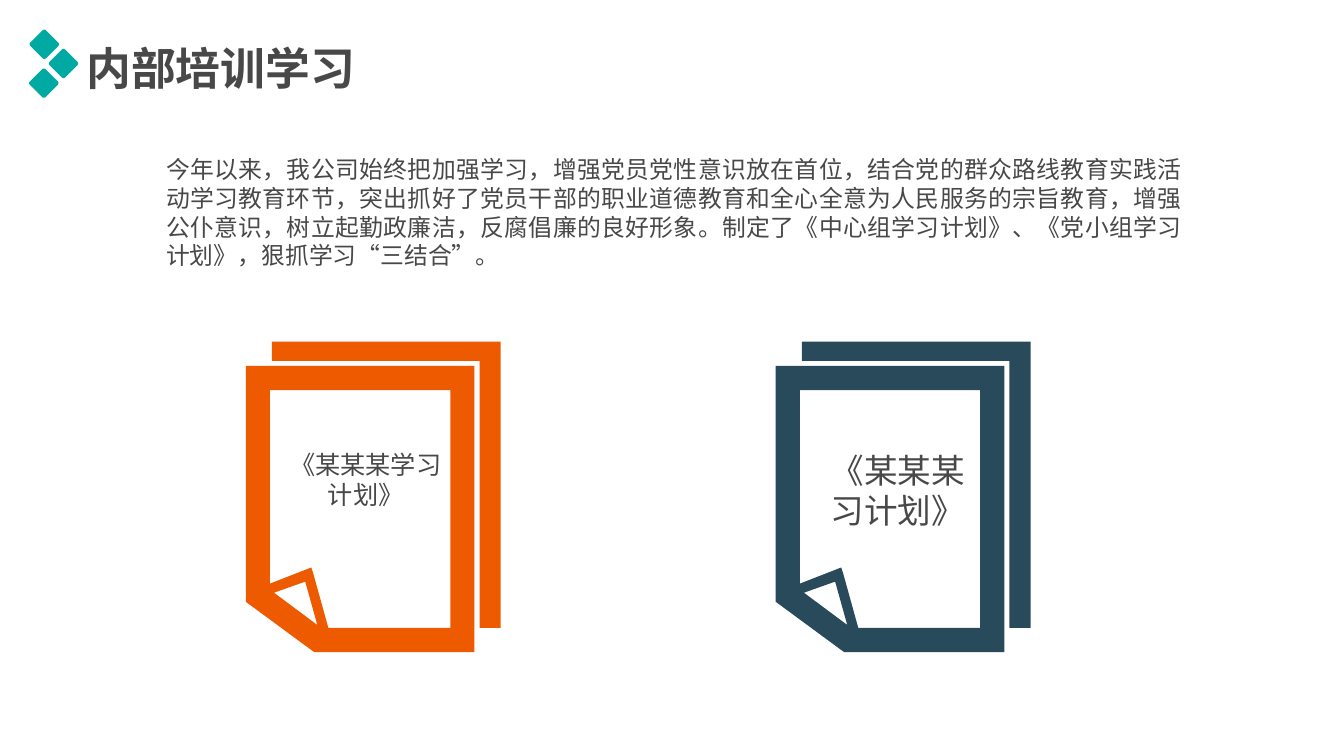
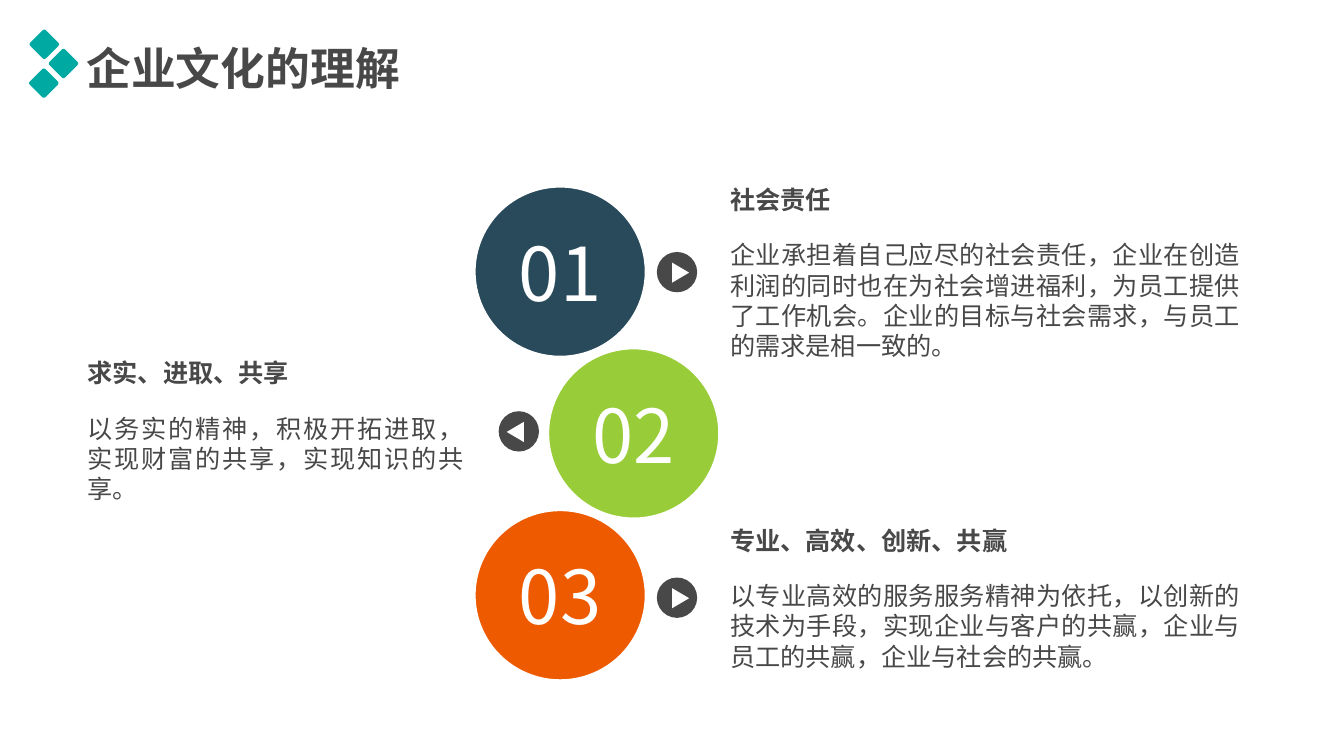
"""Build two slides on staff training and company culture."""
from dataclasses import dataclass

from lxml.etree import SubElement
from pptx import Presentation
from pptx.dml.color import RGBColor
from pptx.enum.lang import MSO_LANGUAGE_ID
from pptx.enum.shapes import MSO_SHAPE
from pptx.enum.text import MSO_ANCHOR, MSO_AUTO_SIZE, PP_ALIGN
from pptx.oxml.ns import qn
from pptx.presentation import Presentation as Deck
from pptx.shapes.autoshape import Shape
from pptx.slide import Slide
from pptx.text.text import TextFrame
from pptx.util import Inches, Pt


@dataclass(frozen=True)
class Theme:
    font: str = "Noto Sans CJK SC"
    ink: str = "484849"
    white: str = "FFFFFF"
    teal: str = "00AAA2"
    orange: str = "ED5A00"
    navy: str = "294A5A"
    green: str = "99CC39"
    title_size: int = 32
    intro_size: int = 17
    body_size: int = 18
    large_size: int = 24
    number_size: int = 53


@dataclass(frozen=True)
class Area:
    left: float
    top: float
    width: float
    height: float


@dataclass(frozen=True)
class Document:
    left: float
    color: str
    label: str
    label_area: Area
    label_size: int


@dataclass(frozen=True)
class Value:
    number: str
    color: str
    points_right: bool
    marker_top: float
    body_area: Area
    heading: str
    body: str


THEME = Theme()
DIAMOND_CENTERS = ((0.44, 0.44), (0.63, 0.63), (0.435, 0.825))
DIAMOND_SIDE = 0.22
DOCUMENT_TOP = 3.39
DOCUMENT_OUTLINES = (
    ((0.26, 0), (2.53, 0), (2.53, 2.84), (2.32, 2.84), (2.32, 0.19), (0.26, 0.19)),
    ((0, 0.24), (2.27, 0.24), (2.27, 3.08), (0.68, 3.08), (0, 2.58)),
    ((0.24, 2.4), (0.65, 2.24), (0.67, 2.3), (0.82, 2.84), (2.03, 2.84),
     (2.03, 0.48), (0.24, 0.48)),
    ((0.71, 2.81), (0.59, 2.38), (0.28, 2.49)),
)
DOCUMENTS = (
    Document(2.44, THEME.orange, "《某某某学习计划》",
             Area(2.72, 4.41, 1.82, 0.7), THEME.body_size),
    Document(7.7, THEME.navy, "《某某某习计划》",
             Area(8, 4.41, 1.82, 0.9), THEME.large_size),
)
INTRO = (
    "今年以来，我公司始终把加强学习，增强党员党性意识放在首位，"
    "结合党的群众路线教育实践活动学习教育环节，"
    "突出抓好了党员干部的职业道德教育和全心全意为人民服务的宗旨教育，"
    "增强公仆意识，树立起勤政廉洁，反腐倡廉的良好形象。"
    "制定了《中心组学习计划》、《党小组学习计划》，狠抓学习“三结合”。"
)
VALUES = (
    Value("01", THEME.navy, True, 2.5, Area(7.15, 2.33, 5.26, 1.3), "社会责任",
          "企业承担着自己应尽的社会责任，企业在创造利润的同时也在为社会增进福利，"
          "为员工提供了工作机会。企业的目标与社会需求，与员工的需求是相一致的。"),
    Value("02", THEME.green, False, 4.08, Area(0.77, 4.05, 3.93, 1), "求实、进取、共享",
          "以务实的精神，积极开拓进取，实现财富的共享，实现知识的共享。"),
    Value("03", THEME.orange, True, 5.73, Area(7.15, 5.71, 5.26, 1),
          "专业、高效、创新、共赢",
          "以专业高效的服务服务精神为依托，以创新的技术为手段，"
          "实现企业与客户的共赢，企业与员工的共赢，企业与社会的共赢。"),
)


def paint(shape: Shape, color: str) -> None:
    shape.shadow.inherit = False
    shape.fill.solid()
    shape.fill.fore_color.rgb = RGBColor.from_string(color)
    shape.line.fill.background()


def add_preset(page: Slide, kind: MSO_SHAPE, area: Area, color: str) -> Shape:
    shape = page.shapes.add_shape(kind, Inches(area.left), Inches(area.top),
                                  Inches(area.width), Inches(area.height))
    paint(shape, color)
    return shape


def write(frame: TextFrame, text: str, size: int, align: PP_ALIGN,
          color: str = THEME.ink, bold: bool = False) -> None:
    para = frame.paragraphs[0]
    para.alignment = align
    span = para.add_run()
    span.text = text
    font = span.font
    font.size = Pt(size)
    font.bold = bold
    font.name = THEME.font
    font.language_id = MSO_LANGUAGE_ID.SIMPLIFIED_CHINESE
    font.color.rgb = RGBColor.from_string(color)
    SubElement(span._r.get_or_add_rPr(), qn("a:ea"), typeface=THEME.font)


def add_text(page: Slide, area: Area, text: str, size: int,
             align: PP_ALIGN = PP_ALIGN.LEFT, bold: bool = False) -> None:
    box = page.shapes.add_textbox(Inches(area.left), Inches(area.top),
                                  Inches(area.width), Inches(area.height))
    box.text_frame.word_wrap = True
    box.text_frame.auto_size = MSO_AUTO_SIZE.SHAPE_TO_FIT_TEXT
    write(box.text_frame, text, size, align, bold=bold)


def add_page(deck: Deck, title: str) -> Slide:
    page = deck.slides.add_slide(deck.slide_layouts[6])
    add_text(page, Area(0.76, 0.35, 6.54, 0.63), title, THEME.title_size, bold=True)
    for center_x, center_y in DIAMOND_CENTERS:
        area = Area(center_x - DIAMOND_SIDE / 2, center_y - DIAMOND_SIDE / 2,
                    DIAMOND_SIDE, DIAMOND_SIDE)
        diamond = add_preset(page, MSO_SHAPE.ROUNDED_RECTANGLE, area, THEME.teal)
        diamond.adjustments[0] = 0.11
        diamond.rotation = 45
    return page


def add_document(page: Slide, document: Document) -> None:
    builder = page.shapes.build_freeform(*map(Inches, DOCUMENT_OUTLINES[0][0]))
    for index, outline in enumerate(DOCUMENT_OUTLINES):
        points = [(Inches(x), Inches(y)) for x, y in outline]
        if index:
            builder.move_to(*points[0])
        builder.add_line_segments(points[1:], close=True)
    paint(builder.convert_to_shape(Inches(document.left), Inches(DOCUMENT_TOP)),
          document.color)
    add_text(page, document.label_area, document.label, document.label_size,
             PP_ALIGN.CENTER)


def add_marker(page: Slide, left: float, top: float, points_right: bool) -> None:
    add_preset(page, MSO_SHAPE.OVAL, Area(left, top, 0.4, 0.4), THEME.ink)
    shift = 0.035 if points_right else -0.035
    area = Area(left + 0.1 + shift, top + 0.12, 0.2, 0.17)
    triangle = add_preset(page, MSO_SHAPE.ISOSCELES_TRIANGLE, area, THEME.white)
    triangle.rotation = 90 if points_right else 270


def add_value(page: Slide, index: int, value: Value) -> None:
    left = 4.7 if value.points_right else 5.43
    circle = add_preset(page, MSO_SHAPE.OVAL,
                        Area(left, 1.84 + 1.605 * index, 1.72, 1.71), value.color)
    circle.line.color.rgb = RGBColor.from_string(THEME.white)
    circle.line.width = Pt(3)
    circle.text_frame.word_wrap = False
    circle.text_frame.vertical_anchor = MSO_ANCHOR.MIDDLE
    write(circle.text_frame, value.number, THEME.number_size, PP_ALIGN.CENTER,
          THEME.white)
    marker_left = left + (1.82 if value.points_right else -0.48)
    add_marker(page, marker_left, value.marker_top, value.points_right)
    body = value.body_area
    heading_area = Area(body.left, body.top - 0.55, body.width, 0.4)
    add_text(page, heading_area, value.heading, THEME.body_size, bold=True)
    add_text(page, body, value.body, THEME.body_size, PP_ALIGN.JUSTIFY)


def add_training_page(deck: Deck) -> None:
    page = add_page(deck, "内部培训学习")
    for document in DOCUMENTS:
        add_document(page, document)
    add_text(page, Area(1.55, 1.49, 10.28, 1.23), INTRO, THEME.intro_size,
             PP_ALIGN.JUSTIFY)


def add_culture_page(deck: Deck) -> None:
    page = add_page(deck, "企业文化的理解")
    for index, value in enumerate(VALUES):
        add_value(page, index, value)


def main() -> None:
    deck = Presentation()
    deck.slide_width = Inches(13.34)
    deck.slide_height = Inches(7.5)
    add_training_page(deck)
    add_culture_page(deck)
    deck.save("out.pptx")


if __name__ == "__main__":
    main()
